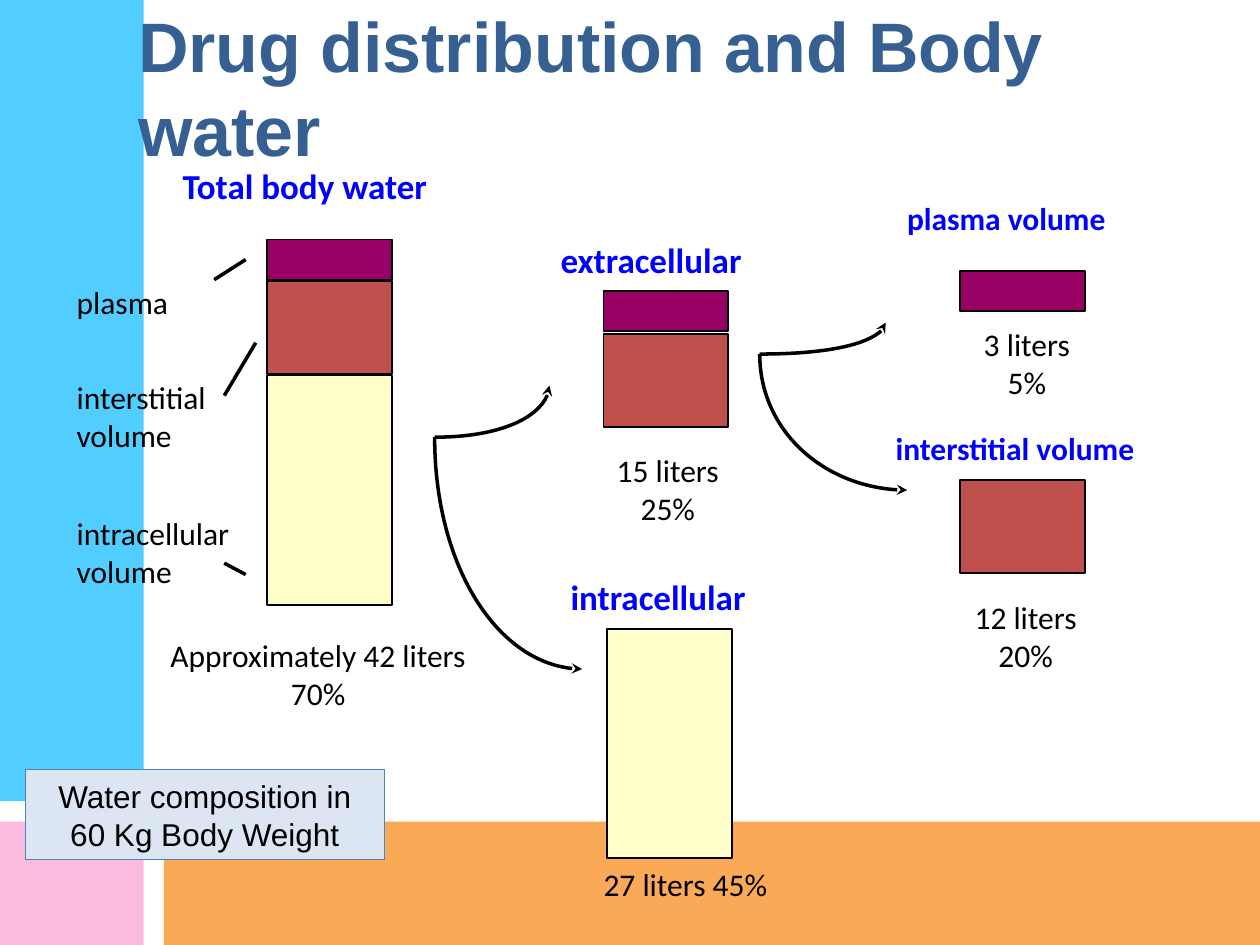
from typing import NamedTuple

from lxml.etree import SubElement
from pptx import Presentation
from pptx.dml.color import RGBColor
from pptx.enum.shapes import MSO_CONNECTOR, MSO_SHAPE
from pptx.enum.text import MSO_ANCHOR, PP_ALIGN
from pptx.oxml.ns import qn
from pptx.util import Inches, Pt

ORANGE = RGBColor(0xF9, 0x94, 0x2E)
PINK = RGBColor(0xF9, 0xAB, 0xD7)
SKY = RGBColor(0x26, 0xC2, 0xFF)
NAVY = RGBColor(0x37, 0x60, 0x92)
PLUM = RGBColor(0x99, 0x00, 0x66)
BRICK = RGBColor(0xC0, 0x50, 0x4D)
CREAM = RGBColor(0xFF, 0xFF, 0xCC)
PALE = RGBColor(0xDC, 0xE6, 0xF2)
STEEL = RGBColor(0x4F, 0x81, 0xBD)
BLUE = RGBColor(0x00, 0x00, 0xFF)
BLACK = RGBColor(0x00, 0x00, 0x00)

BAR_WIDTH = 0.99
CURVE = 0.55  # share of the way to the corner that rounds a quarter ellipse


class Box(NamedTuple):
    left: float
    top: float
    width: float
    height: float


class Point(NamedTuple):
    x: float
    y: float


class Fluid(NamedTuple):
    color: RGBColor
    height: float


class Bar(NamedTuple):
    fluid: Fluid
    left: float
    top: float


class Label(NamedTuple):
    text: str
    box: Box


class Arrow(NamedTuple):
    tip: Point
    tail: Point
    corner: Point


PLASMA = Fluid(PLUM, 0.32)
TISSUE = Fluid(BRICK, 0.74)
CELL = Fluid(CREAM, 1.82)

PANELS = [
    (ORANGE, Box(1.3, 6.52, 8.7, 0.98)),
    (PINK, Box(0, 6.52, 1.14, 0.98)),
    (SKY, Box(0, 0, 1.14, 6.36)),
]
BARS = [
    Bar(PLASMA, 2.12, 1.9), Bar(TISSUE, 2.12, 2.23), Bar(CELL, 2.12, 2.98),
    Bar(PLASMA, 4.79, 2.31), Bar(TISSUE, 4.79, 2.65), Bar(CELL, 4.82, 4.99),
    Bar(PLASMA, 7.62, 2.15), Bar(TISSUE, 7.62, 3.81),
]
HEADS = [
    Label("Total body water", Box(1.35, 1.26, 2.41, 0.44)),
    Label("extracellular", Box(4.35, 1.84, 1.85, 0.44)),
    Label("intracellular", Box(4.43, 4.52, 1.79, 0.44)),
]
SUBHEADS = [
    Label("plasma volume", Box(7.1, 1.53, 2.01, 0.4)),
    Label("interstitial volume", Box(7.01, 3.36, 2.34, 0.4)),
]
PARTS = [
    Label("plasma", Box(0.51, 2.2, 1.01, 0.4)),
    Label("interstitial\vvolume", Box(0.51, 2.95, 1.26, 0.7)),
    Label("intracellular\vvolume", Box(0.51, 4.03, 1.48, 0.7)),
]
AMOUNTS = [
    Label("Approximately 42 liters\n70%", Box(1.25, 5, 2.55, 0.71)),
    Label("15 liters\n25%", Box(4.76, 3.53, 1.08, 0.7)),
    Label("27 liters 45%", Box(4.37, 6.82, 2.14, 0.4)),
    Label("3 liters\n5%", Box(7.68, 2.53, 0.94, 0.7)),
    Label("12 liters\n20%", Box(7.6, 4.7, 1.08, 0.7)),
]
LEADERS = [
    (Point(1.7, 2.22), Point(1.95, 2.06)),
    (Point(1.78, 3.14), Point(2.03, 2.72)),
    (Point(1.78, 4.47), Point(1.95, 4.56)),
]
TOTAL, EXTRA = Point(3.45, 3.47), Point(6.03, 2.81)
ARROWS = [
    Arrow(Point(4.36, 3.06), TOTAL, Point(4.36, TOTAL.y)),
    Arrow(Point(4.62, 5.31), TOTAL, Point(TOTAL.x, 5.31)),
    Arrow(Point(7.03, 2.56), EXTRA, Point(7.03, EXTRA.y)),
    Arrow(Point(7.2, 3.89), EXTRA, Point(EXTRA.x, 3.89)),
]


def inches(values) -> list:
    return [Inches(v) for v in values]


def write(frame, text: str, *, size=18, font="Calibri", color=BLACK,
          bold=False, align=PP_ALIGN.LEFT, wrap=False,
          anchor=MSO_ANCHOR.TOP) -> None:
    frame.word_wrap = wrap
    frame.vertical_anchor = anchor
    frame.text = text
    for par in frame.paragraphs:
        par.alignment = align
        for run in par.runs:
            run.font.size = Pt(size)
            run.font.name = font
            run.font.bold = bold
            run.font.color.rgb = color


def add_text(slide, label: Label, **style) -> None:
    box = slide.shapes.add_textbox(*inches(label.box))
    write(box.text_frame, label.text, **style)


def add_rect(slide, box: Box, fill: RGBColor, line=None, weight=1.0):
    rect = slide.shapes.add_shape(MSO_SHAPE.RECTANGLE, *inches(box))
    rect.shadow.inherit = False
    rect.fill.solid()
    rect.fill.fore_color.rgb = fill
    if line is None:
        rect.line.fill.background()
    else:
        rect.line.color.rgb = line
        rect.line.width = Pt(weight)
    return rect


def add_panel(slide, color: RGBColor, box: Box) -> None:
    panel = add_rect(slide, box, color)
    fill = panel.fill._xPr.find(qn("a:solidFill"))
    SubElement(fill[0], qn("a:alpha"), val="80000")


def add_leader(slide, start: Point, end: Point) -> None:
    line = slide.shapes.add_connector(
        MSO_CONNECTOR.STRAIGHT, *inches(start + end))
    line.line.color.rgb = BLACK
    line.line.width = Pt(2)
    SubElement(line._element.spPr, qn("a:effectLst"))


def toward(start: Point, end: Point) -> Point:
    return Point(*(a + CURVE * (b - a) for a, b in zip(start, end)))


def add_arrow(slide, arrow: Arrow) -> None:
    """Draw a quarter ellipse with a stealth head at its tip."""
    tip, tail, corner = arrow
    nodes = [toward(tip, corner), toward(tail, corner), tail]
    pen = slide.shapes.build_freeform(*inches(tip))
    pen.add_line_segments([inches(n) for n in nodes], close=False)
    shape = pen.convert_to_shape()
    shape.shadow.inherit = False
    shape.fill.background()
    shape.line.color.rgb = BLACK
    shape.line.width = Pt(2)
    SubElement(shape.line._ln, qn("a:headEnd"), type="stealth")
    route = next(shape._element.iter(qn("a:path")))
    steps = route.findall(qn("a:lnTo"))
    curve = SubElement(route, qn("a:cubicBezTo"))
    for step in steps:
        curve.append(step[0])
        route.remove(step)


def main() -> None:
    deck = Presentation()
    deck.slide_width, deck.slide_height = Inches(10), Inches(7.5)
    slide = deck.slides.add_slide(deck.slide_layouts[6])

    for color, box in PANELS:
        add_panel(slide, color, box)
    title = Label("Drug distribution and Body water", Box(1, 0.3, 8.5, 0.77))
    add_text(slide, title, size=40, font="Arial", color=NAVY, bold=True,
             wrap=True, anchor=MSO_ANCHOR.MIDDLE)
    for fluid, left, top in BARS:
        box = Box(left, top, BAR_WIDTH, fluid.height)
        add_rect(slide, box, fluid.color, BLACK)
    for label in HEADS:
        add_text(slide, label, size=20, color=BLUE, bold=True)
    for label in SUBHEADS:
        add_text(slide, label, color=BLUE, bold=True)
    for label in PARTS:
        add_text(slide, label)
    for label in AMOUNTS:
        add_text(slide, label, align=PP_ALIGN.CENTER)
    for start, end in LEADERS:
        add_leader(slide, start, end)
    for arrow in ARROWS:
        add_arrow(slide, arrow)
    note = add_rect(slide, Box(0.2, 6.11, 2.85, 0.71), PALE, STEEL, 0.75)
    write(note.text_frame, "Water composition in\n60 Kg Body Weight",
          font="Arial", align=PP_ALIGN.CENTER, wrap=True,
          anchor=MSO_ANCHOR.MIDDLE)
    deck.save("out.pptx")


if __name__ == "__main__":
    main()
